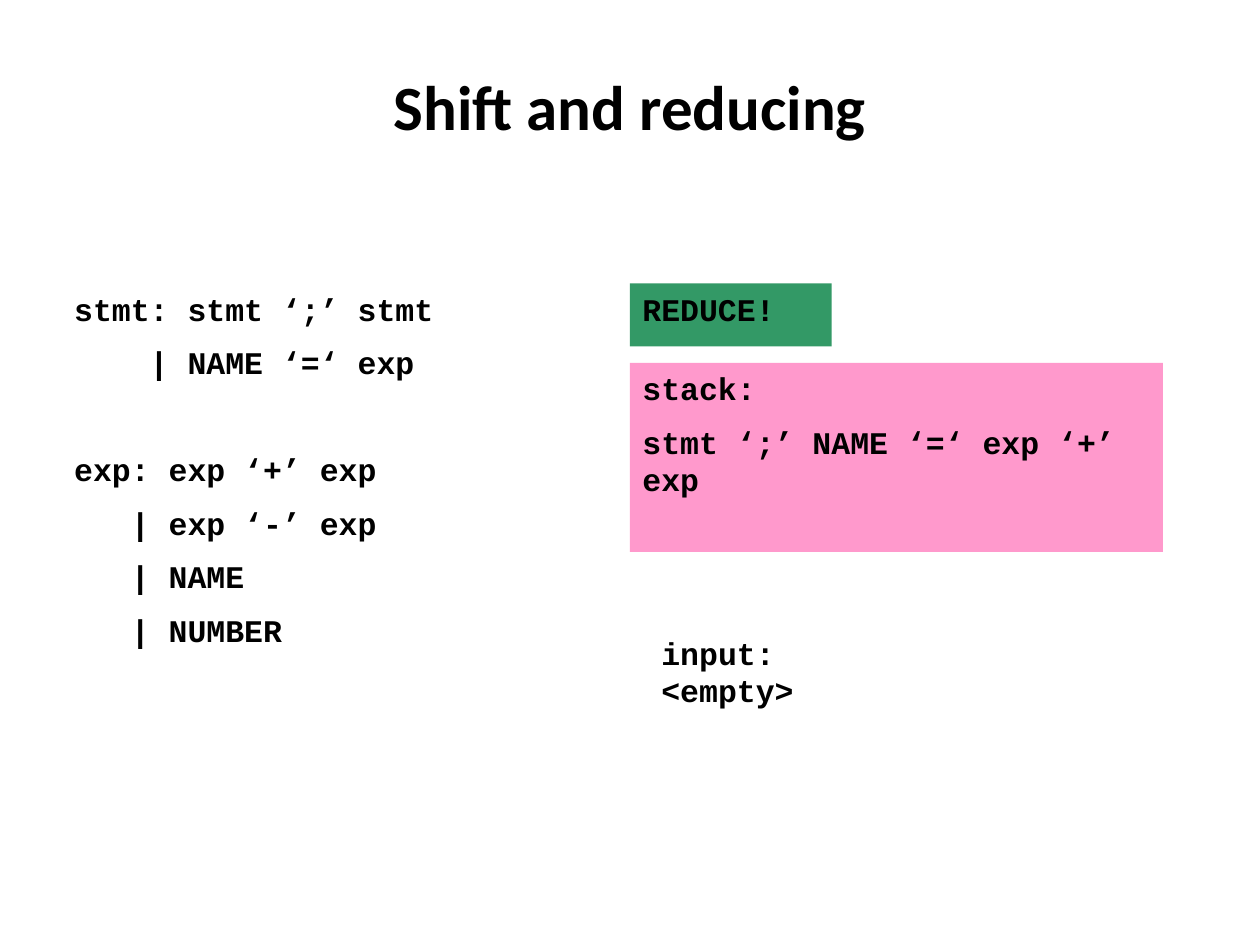
from dataclasses import dataclass

from pptx import Presentation
from pptx.dml.color import RGBColor
from pptx.enum.shapes import MSO_SHAPE
from pptx.enum.text import MSO_ANCHOR, PP_ALIGN
from pptx.util import Inches, Pt


@dataclass(frozen=True)
class Theme:
    ink: RGBColor = RGBColor(0, 0, 0)
    pink: RGBColor = RGBColor(0xFF, 0x99, 0xCC)
    green: RGBColor = RGBColor(0x33, 0x99, 0x66)
    head: str = "Calibri"
    code: str = "Courier New"
    large: int = 36
    small: int = 18
    gap: float = 9
    rule_gap: float = 39.5
    char: float = 0.15


THEME = Theme()


def write(frame, lines, font=THEME.code, size=THEME.small, gap=0,
          align=PP_ALIGN.LEFT, anchor=MSO_ANCHOR.TOP):
    frame.word_wrap = True
    frame.vertical_anchor = anchor
    for i, line in enumerate(lines):
        para = frame.paragraphs[0] if i == 0 else frame.add_paragraph()
        para.alignment = align
        para.space_before = Pt(gap if i else 0)
        run = para.add_run()
        run.text = line
        run.font.name = font
        run.font.size = Pt(size)
        run.font.bold = True
        run.font.color.rgb = THEME.ink


def add_text(slide, box, lines, **form):
    shape = slide.shapes.add_textbox(*map(Inches, box))
    write(shape.text_frame, lines, **form)
    return shape


def add_panel(slide, box, lines, fill, **form):
    shape = slide.shapes.add_shape(MSO_SHAPE.RECTANGLE, *map(Inches, box))
    shape.shadow.inherit = False
    shape.fill.solid()
    shape.fill.fore_color.rgb = fill
    shape.line.fill.background()
    write(shape.text_frame, lines, **form)


def add_title(slide, box, text):
    add_text(slide, box, [text], font=THEME.head, size=THEME.large,
             align=PP_ALIGN.CENTER, anchor=MSO_ANCHOR.MIDDLE)


def add_grammar(slide, box, rules):
    lines, heads, depths = [], [], []
    for name, first, *rest in rules:
        heads.append(len(lines))
        lines += [f"{name}: {first}"] + [f"| {alt}" for alt in rest]
        depths += [0] + [len(name)] * len(rest)
    shape = add_text(slide, box, lines, gap=THEME.gap)
    paras = shape.text_frame.paragraphs
    for para, depth in zip(paras, depths):
        if depth:
            indent = Inches(depth * THEME.char)
            para._p.get_or_add_pPr().set("marL", str(indent))
    for i in heads[1:]:
        paras[i].space_before = Pt(THEME.rule_gap)


def add_state(slide, box, action, stack, rest):
    left, top, width, height = box
    add_text(slide, (left + 0.15, top + 2.73, 1.48, 0.9), ["input:", rest])
    add_panel(slide, (left, top + 0.63, width, 1.5), ["stack:", stack],
              THEME.pink, gap=THEME.gap)
    add_panel(slide, (left, top, 1.6, 0.5), [action], THEME.green)


def main():
    deck = Presentation()
    deck.slide_width, deck.slide_height = Inches(10), Inches(7.5)
    slide = deck.slides.add_slide(deck.slide_layouts[6])
    add_title(slide, (0.5, 0.3, 9, 1.07), "Shift and reducing")
    add_grammar(slide, (0.49, 2.25, 4.07, 4.09), [
        ("stmt", "stmt ‘;’ stmt", "NAME ‘=‘ exp"),
        ("exp", "exp ‘+’ exp", "exp ‘-’ exp", "NAME", "NUMBER"),
    ])
    add_state(slide, (5, 2.25, 4.23, 3.63), "REDUCE!",
              "stmt ‘;’ NAME ‘=‘ exp ‘+’ exp", "<empty>")
    deck.save("out.pptx")


if __name__ == "__main__":
    main()
